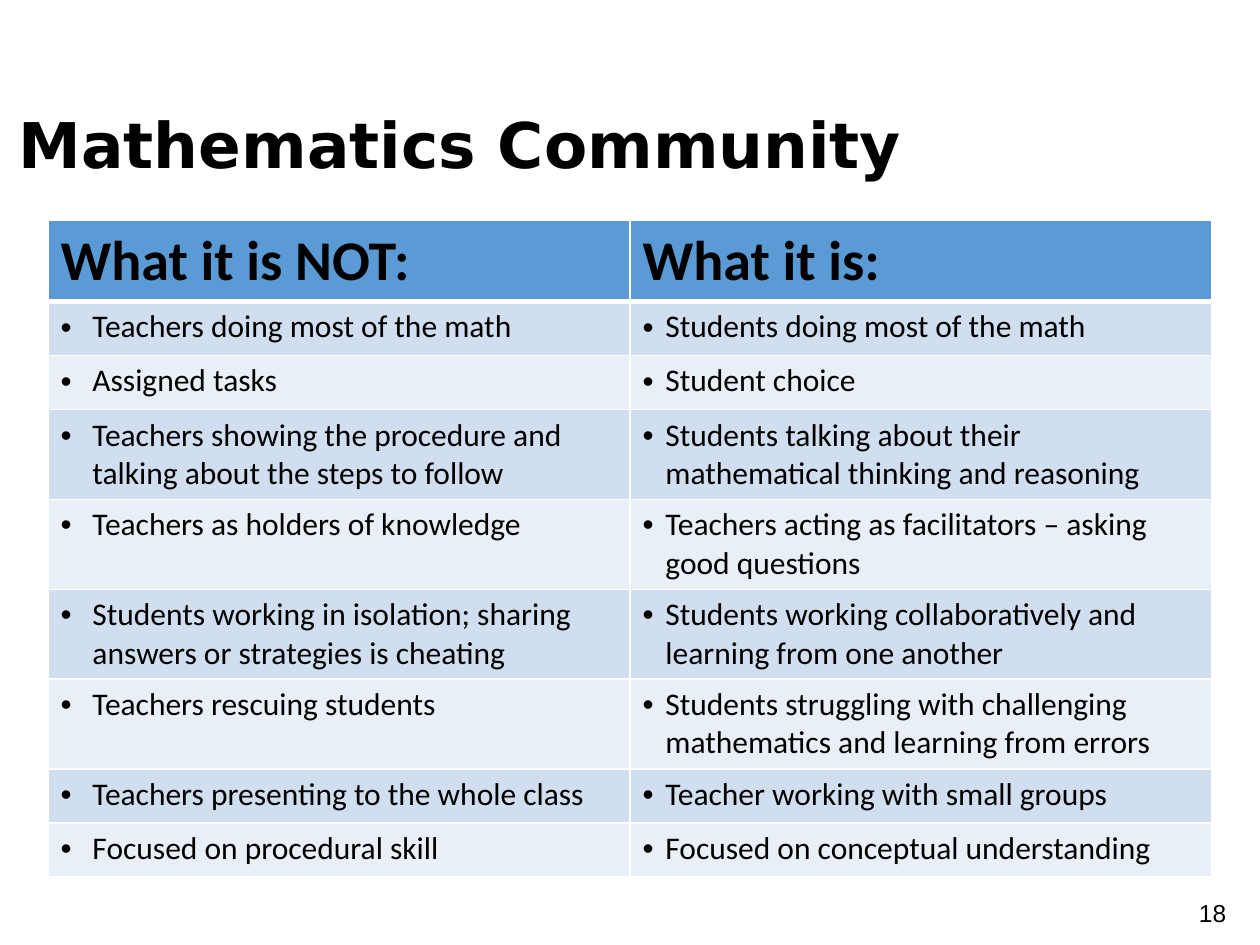
from lxml import etree
from pptx import Presentation
from pptx.dml.color import RGBColor
from pptx.enum.text import MSO_ANCHOR, PP_ALIGN
from pptx.oxml.ns import qn
from pptx.util import Cm, Pt

MIDDLE = MSO_ANCHOR.MIDDLE
RIGHT = PP_ALIGN.RIGHT
BLACK = RGBColor(0x00, 0x00, 0x00)
WHITE = RGBColor(0xFF, 0xFF, 0xFF)
HEADER_BLUE = RGBColor(0x5B, 0x9B, 0xD5)
BANDS = [RGBColor(0xD0, 0xDE, 0xEF), RGBColor(0xE9, 0xEF, 0xF7)]

HEADINGS = ("What it is NOT:", "What it is:")
CONTRASTS = [
    ("Teachers doing most of the math", "Students doing most of the math"),
    ("Assigned tasks", "Student choice"),
    ("Teachers showing the procedure and talking about the steps to follow",
     "Students talking about their mathematical thinking and reasoning"),
    ("Teachers as holders of knowledge",
     "Teachers acting as facilitators – asking good questions"),
    ("Students working in isolation; sharing answers or strategies is cheating",
     "Students working collaboratively and learning from one another"),
    ("Teachers rescuing students",
     "Students struggling with challenging mathematics and learning from errors"),
    ("Teachers presenting to the whole class", "Teacher working with small groups"),
    ("Focused on procedural skill", "Focused on conceptual understanding"),
]
ROW_HEIGHTS = [Cm(1.63)] + [Cm(h) for h in (1.09, 1.09, 1.81, 1.81, 1.81, 1.81, 1.09, 1.09)]
COLUMN_WIDTH = Cm(11.73)
BULLET_INDENTS = [Cm(0.64), Cm(0.46)]


def add_run(paragraph, text, size, font_name, bold=False):
    run = paragraph.add_run()
    run.text = text
    run.font.size = Pt(size)
    run.font.name = font_name
    run.font.bold = bold
    run.font.color.rgb = BLACK


def set_borders(cell, top, bottom):
    properties = cell._tc.get_or_add_tcPr()
    widths = {"a:lnL": 1, "a:lnR": 1, "a:lnT": top, "a:lnB": bottom}
    for position, (side, width) in enumerate(widths.items()):
        line = etree.Element(qn(side), w=str(Pt(width)))
        fill = etree.SubElement(line, qn("a:solidFill"))
        etree.SubElement(fill, qn("a:srgbClr"), val=str(WHITE))
        properties.insert(position, line)


prs = Presentation()
prs.slide_width, prs.slide_height = Cm(25.4), Cm(19.05)
slide = prs.slides.add_slide(prs.slide_layouts[6])

# Title
title = slide.shapes.add_textbox(Cm(0.13), Cm(1.3), Cm(22.86), Cm(3.18)).text_frame
title.word_wrap = True
title.vertical_anchor = MIDDLE
title.margin_top = title.margin_bottom = Cm(0.25)
add_run(title.paragraphs[0], "Mathematics Community", 36, "DejaVu Sans", True)

# Comparison table
comparison = slide.shapes.add_table(
    len(CONTRASTS) + 1, 2, Cm(0.97), Cm(4.45), 2 * COLUMN_WIDTH, sum(ROW_HEIGHTS)).table
for column in comparison.columns:
    column.width = COLUMN_WIDTH
for row, height in zip(comparison.rows, ROW_HEIGHTS):
    row.height = height

for row_index, statements in enumerate([HEADINGS] + CONTRASTS):
    is_header = row_index == 0
    for column_index, statement in enumerate(statements):
        cell = comparison.cell(row_index, column_index)
        cell.fill.solid()
        cell.fill.fore_color.rgb = HEADER_BLUE if is_header else BANDS[(row_index - 1) % 2]
        set_borders(cell, 3 if row_index == 1 else 1, 3 if is_header else 1)
        paragraph = cell.text_frame.paragraphs[0]
        if is_header:
            add_run(paragraph, statement, 32, "Calibri", True)
            continue
        # Bulleted statement with a hanging indent
        indent = BULLET_INDENTS[column_index]
        bullet = paragraph._p.get_or_add_pPr()
        bullet.set("marL", str(indent))
        bullet.set("indent", str(-indent))
        bullet_color = etree.SubElement(bullet, qn("a:buClr"))
        etree.SubElement(bullet_color, qn("a:srgbClr"), val=str(BLACK))
        etree.SubElement(bullet, qn("a:buFont"), typeface="Arial")
        etree.SubElement(bullet, qn("a:buChar"), char="•")
        add_run(paragraph, statement, 18, "Calibri")

# Slide number
page_number = slide.shapes.add_textbox(Cm(19.05), Cm(17.98), Cm(5.92), Cm(1.07)).text_frame
page_number.word_wrap = True
page_number.paragraphs[0].alignment = RIGHT
add_run(page_number.paragraphs[0], "18", 14, "Arial")

prs.save("out.pptx")
